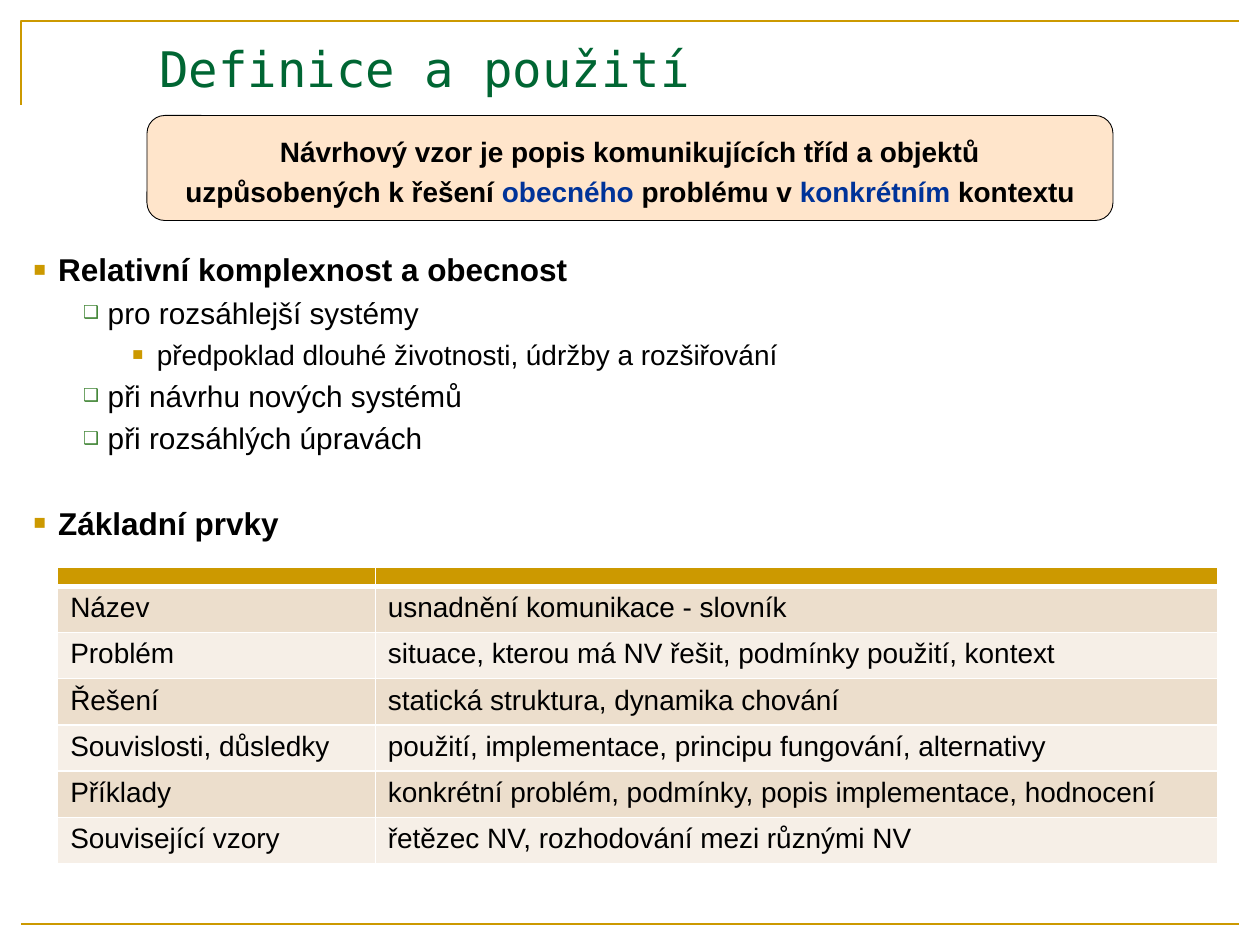
from dataclasses import dataclass

from lxml import etree
from pptx import Presentation
from pptx.dml.color import RGBColor
from pptx.enum.shapes import MSO_CONNECTOR, MSO_SHAPE
from pptx.enum.text import MSO_ANCHOR, MSO_AUTO_SIZE, PP_ALIGN
from pptx.oxml.ns import qn
from pptx.util import Pt

STRAIGHT = MSO_CONNECTOR.STRAIGHT
CALLOUT = MSO_SHAPE.ROUNDED_RECTANGULAR_CALLOUT
MIDDLE, TOP = MSO_ANCHOR.MIDDLE, MSO_ANCHOR.TOP
LEFT, CENTER = PP_ALIGN.LEFT, PP_ALIGN.CENTER
FIXED = MSO_AUTO_SIZE.NONE

SANS, MONO = "Arial", "DejaVu Sans Mono"
GOLD, GREEN, LEAF, BLUE = "CC9900", "006633", "3B812F", "003399"
BLACK, WHITE, PEACH = "000000", "FFFFFF", "FFCC99"
BANDS = ("ECDECC", "F6EFE7")


@dataclass
class Level:
    size: float
    left: float
    mark: str
    tint: str
    scale: int
    bold: bool = False


@dataclass
class Item:
    text: str
    level: int
    gap: float


LEVELS = (
    Level(18, 14.2, "■", GOLD, 65, True),
    Level(17, 42.5, "❑", LEAF, 60),
    Level(16, 70.5, "■", GOLD, 65),
)
ITEMS = (
    Item("Relativní komplexnost a obecnost", 0, 0),
    Item("pro rozsáhlejší systémy", 1, 3.9),
    Item("předpoklad dlouhé životnosti, údržby a rozšiřování", 2, 3.7),
    Item("při návrhu nových systémů", 1, 3.9),
    Item("při rozsáhlých úpravách", 1, 3.9),
    Item("Základní prvky", 0, 27.5),
)
QUOTE = (
    (("Návrhový vzor je popis komunikujících tříd a objektů", BLACK),),
    (("uzpůsobených k řešení ", BLACK), ("obecného", BLUE),
     (" problému v ", BLACK), ("konkrétním", BLUE), (" kontextu", BLACK)),
)
ROWS = (
    ("Název", "usnadnění komunikace - slovník"),
    ("Problém", "situace, kterou má NV řešit, podmínky použití, kontext"),
    ("Řešení", "statická struktura, dynamika chování"),
    ("Souvislosti, důsledky",
     "použití, implementace, principu fungování, alternativy"),
    ("Příklady", "konkrétní problém, podmínky, popis implementace, hodnocení"),
    ("Související vzory", "řetězec NV, rozhodování mezi různými NV"),
)


def rgb(code: str) -> RGBColor:
    return RGBColor.from_string(code)


def apply(target, **values) -> None:
    for name, value in values.items():
        setattr(target, name, value)


def add_node(parent, tag: str, **attrs):
    return etree.SubElement(parent, qn(tag), {k: str(v) for k, v in attrs.items()})


def add_run(para, text: str, size: float, color: str = BLACK,
            bold: bool = False, face: str = SANS) -> None:
    run = para.add_run()
    run.text = text
    apply(run.font, name=face, size=Pt(size), bold=bold)
    run.font.color.rgb = rgb(color)


def next_para(frame, index: int):
    return frame.add_paragraph() if index else frame.paragraphs[0]


def set_line(line, color: str, width: float) -> None:
    line.color.rgb = rgb(color)
    line.width = Pt(width)


def draw_frame(shapes) -> None:
    pen = shapes.build_freeform(Pt(12), Pt(60))
    pen.add_line_segments([(Pt(12), Pt(12)), (Pt(708), Pt(12))], close=False)
    corner = pen.convert_to_shape()
    corner.shadow.inherit = False
    corner.fill.background()
    base = shapes.add_connector(STRAIGHT, Pt(12), Pt(528), Pt(708), Pt(528))
    add_node(base._element.spPr, "a:effectLst")
    for part in (corner, base):
        set_line(part.line, GOLD, 1.5)


def draw_title(title) -> None:
    apply(title, left=Pt(84), top=Pt(18), width=Pt(624), height=Pt(42))
    apply(title.text_frame, auto_size=FIXED, vertical_anchor=MIDDLE)
    para = title.text_frame.paragraphs[0]
    para.alignment = LEFT
    add_run(para, "Definice a použití", 28, GREEN, face=MONO)


def draw_list(shapes) -> None:
    box = shapes.add_textbox(Pt(12), Pt(138), Pt(696), Pt(390))
    frame = box.text_frame
    apply(frame, word_wrap=True, vertical_anchor=TOP, margin_top=Pt(5))
    for index, item in enumerate(ITEMS):
        level = LEVELS[item.level]
        para = next_para(frame, index)
        apply(para, level=item.level, alignment=LEFT, space_before=Pt(item.gap))
        props = para._p.get_or_add_pPr()
        props.set("marL", str(Pt(level.left)))
        props.set("indent", str(-Pt(14)))
        add_node(add_node(props, "a:buClr"), "a:srgbClr", val=level.tint)
        add_node(props, "a:buSzPct", val=level.scale * 1000)
        add_node(props, "a:buFont", typeface=SANS)
        add_node(props, "a:buChar", char=level.mark)
        add_run(para, item.text, level.size, bold=level.bold)


def draw_quote(shapes) -> None:
    box = shapes.add_shape(CALLOUT, Pt(84), Pt(66), Pt(552), Pt(60))
    for index, value in enumerate((-0.5, -0.27, 0.17)):
        box.adjustments[index] = value
    box.shadow.inherit = False
    box.fill.solid()
    box.fill.fore_color.rgb = rgb(PEACH)
    tint = box._element.spPr.find(qn("a:solidFill")).find(qn("a:srgbClr"))
    add_node(tint, "a:alpha", val=50000)
    set_line(box.line, BLACK, 0.5)
    frame = box.text_frame
    apply(frame, word_wrap=True, vertical_anchor=MIDDLE, margin_left=Pt(4),
          margin_right=Pt(4), margin_top=Pt(3), margin_bottom=Pt(3))
    for index, parts in enumerate(QUOTE):
        para = next_para(frame, index)
        apply(para, alignment=CENTER, line_spacing=1.2)
        for text, color in parts:
            add_run(para, text, 16, color, bold=True)


def style_cell(cell, fill: str, top: float = 1, bottom: float = 1) -> None:
    props = cell._tc.get_or_add_tcPr()
    for side, width in zip("LRTB", (1, 1, top, bottom)):
        edge = add_node(props, f"a:ln{side}", w=Pt(width))
        add_node(add_node(edge, "a:solidFill"), "a:srgbClr", val=WHITE)
    cell.fill.solid()
    cell.fill.fore_color.rgb = rgb(fill)


def draw_table(shapes) -> None:
    table = shapes.add_table(len(ROWS) + 1, 2, Pt(33), Pt(324),
                             Pt(663), Pt(169.4)).table
    table.horz_banding = False
    for column, width in zip(table.columns, (181.5, 481.5)):
        column.width = Pt(width)
    for index, row in enumerate(table.rows):
        row.height = Pt(26.4 if index else 11)
    # Thin empty header
    for cell in table.rows[0].cells:
        apply(cell, margin_top=0, margin_bottom=0)
        add_node(cell.text_frame.paragraphs[0]._p, "a:endParaRPr", sz=800)
        style_cell(cell, GOLD, bottom=3)
    # Banded rows
    for index, texts in enumerate(ROWS):
        for cell, text in zip(table.rows[index + 1].cells, texts):
            add_run(cell.text_frame.paragraphs[0], text, 16)
            style_cell(cell, BANDS[index % 2], top=1 if index else 3)


def main() -> None:
    deck = Presentation()
    apply(deck, slide_width=Pt(720), slide_height=Pt(540))
    slide = deck.slides.add_slide(deck.slide_layouts[5])
    draw_frame(slide.shapes)
    draw_title(slide.shapes.title)
    draw_list(slide.shapes)
    draw_quote(slide.shapes)
    draw_table(slide.shapes)
    deck.save("out.pptx")


if __name__ == "__main__":
    main()
